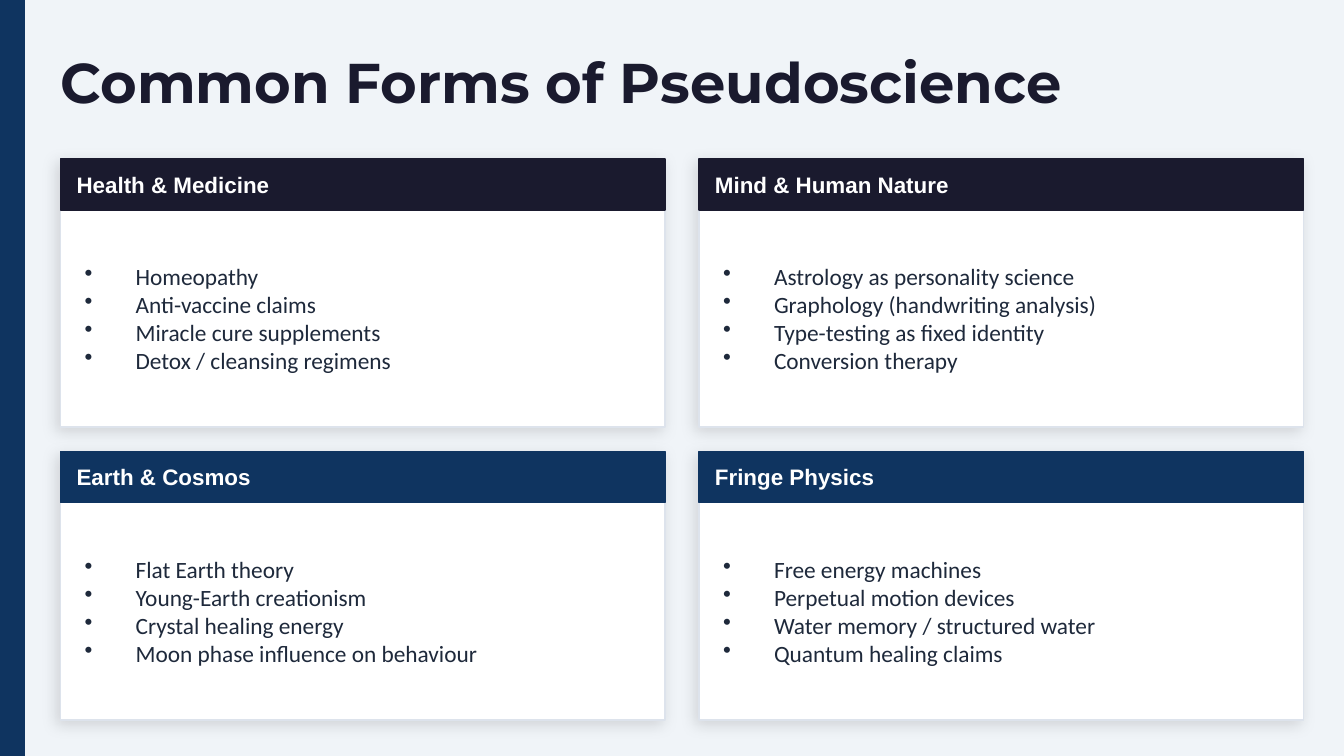
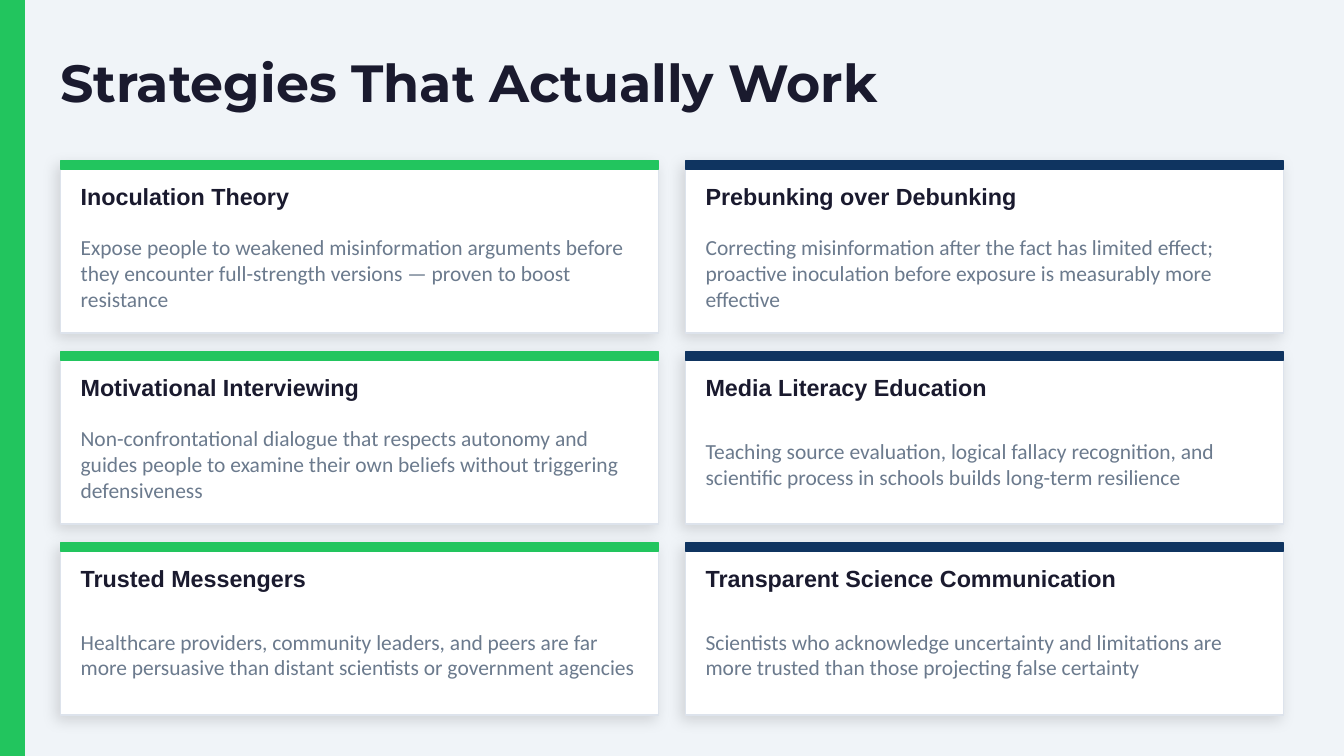
from lxml import etree
from pptx import Presentation
from pptx import util as u
from pptx.dml.color import RGBColor
from pptx.enum import shapes, text
from pptx.oxml.ns import qn

# Content: heading, then body
FORMS = [
    ("Health & Medicine", ["Homeopathy", "Anti-vaccine claims",
                           "Miracle cure supplements", "Detox / cleansing regimens"]),
    ("Mind & Human Nature", ["Astrology as personality science",
                             "Graphology (handwriting analysis)",
                             "Type-testing as fixed identity", "Conversion therapy"]),
    ("Earth & Cosmos", ["Flat Earth theory", "Young-Earth creationism",
                        "Crystal healing energy", "Moon phase influence on behaviour"]),
    ("Fringe Physics", ["Free energy machines", "Perpetual motion devices",
                        "Water memory / structured water", "Quantum healing claims"]),
]
PLANS = [
    ("Inoculation Theory", "Expose people to weakened misinformation arguments before "
     "they encounter full-strength versions — proven to boost resistance"),
    ("Prebunking over Debunking", "Correcting misinformation after the fact has limited "
     "effect; proactive inoculation before exposure is measurably more effective"),
    ("Motivational Interviewing", "Non-confrontational dialogue that respects autonomy and "
     "guides people to examine their own beliefs without triggering defensiveness"),
    ("Media Literacy Education", "Teaching source evaluation, logical fallacy recognition, "
     "and scientific process in schools builds long-term resilience"),
    ("Trusted Messengers", "Healthcare providers, community leaders, and peers are far "
     "more persuasive than distant scientists or government agencies"),
    ("Transparent Science Communication", "Scientists who acknowledge uncertainty and "
     "limitations are more trusted than those projecting false certainty"),
]

# Shared style
HEX = {"page": "F0F4F8", "ink": "1A1A2E", "navy": "0F3460", "green": "22C55E",
       "card": "FFFFFF", "edge": "DDE3EC", "body": "1E293B", "gray": "6B7A8D"}
HEAD, BODY, TITLE = "Arial", "Calibri", "Montserrat"
LEFT, COLS = 0.45, 2

deck = Presentation()
deck.slide_width = u.Inches(10)
deck.slide_height = deck.slide_width * 9 // 16
TALL = deck.slide_height / u.Inches(1)


def rgb(name):
    return RGBColor.from_string(HEX[name])


def inch(*box):
    return [u.Inches(v) for v in box]


def write(shape, lines, size=12, font=BODY, color="ink", bold=False, bullet=False):
    """Fill a shape with one paragraph per line."""
    frame = shape.text_frame
    frame.word_wrap = True
    frame.auto_size = text.MSO_AUTO_SIZE.NONE
    frame.vertical_anchor = text.MSO_ANCHOR.MIDDLE
    frame.margin_left = frame.margin_right = frame.margin_top = frame.margin_bottom = 0
    for i, line in enumerate([lines] if isinstance(lines, str) else lines):
        para = frame.add_paragraph() if i else frame.paragraphs[0]
        para.alignment = text.PP_ALIGN.LEFT
        if bullet:
            props = para._p.get_or_add_pPr()
            props.set("marL", str(u.Inches(0.38)))
            props.set("indent", str(-u.Inches(0.38)))
            etree.SubElement(props, qn("a:buChar"), char="•")
        run = para.add_run()
        run.text = line
        run.font.size, run.font.name, run.font.bold = u.Pt(size), font, bold
        run.font.color.rgb = rgb(color)


def label(slide, box, lines, **style):
    write(slide.shapes.add_textbox(*inch(*box)), lines, **style)


def rect(slide, box, fill, edge=None, shade=False):
    shape = slide.shapes.add_shape(shapes.MSO_SHAPE.RECTANGLE, *inch(*box))
    shape.fill.solid()
    shape.fill.fore_color.rgb = rgb(fill)
    shape.line.color.rgb = rgb(edge or fill)
    shape.line.width = u.Pt(1)
    shape.shadow.inherit = False
    if shade:
        effect = shape._element.spPr.find(qn("a:effectLst"))
        drop = etree.SubElement(effect, qn("a:outerShdw"), blurRad=str(u.Pt(8)),
                                dist=str(u.Pt(3)), dir=str(135 * 60000),
                                algn="bl", rotWithShape="0")
        tint = etree.SubElement(drop, qn("a:srgbClr"), val="000000")
        etree.SubElement(tint, qn("a:alpha"), val="12000")


def start(title, size, side):
    """Add a slide with its background, side band and title."""
    slide = deck.slides.add_slide(deck.slide_layouts[5])
    slide.background.fill.solid()
    slide.background.fill.fore_color.rgb = rgb("page")
    rect(slide, (0, 0, 0.18, TALL), side)
    head = slide.shapes.title
    head.left, head.top, head.width, head.height = inch(LEFT, 0.28, 9.2, 0.65)
    write(head, title, size=size, font=TITLE, bold=True)
    return slide


def cards(slide, items, top, wide, high, gaps, band, tints):
    """Lay out cards row by row; yield each corner, heading and body."""
    for i, (head, body) in enumerate(items):
        row, col = divmod(i, COLS)
        x = LEFT + col * (wide + gaps[0])
        y = top + row * (high + gaps[1])
        rect(slide, (x, y, wide, high), "card", "edge", shade=True)
        rect(slide, (x, y, wide, band), tints[row][col])
        yield x, y, head, body


# Forms: two by two, one header colour per row
page = start("Common Forms of Pseudoscience", 30, "navy")
tints = [("ink", "ink"), ("navy", "navy")]
for x, y, head, body in cards(page, FORMS, 1.18, 4.5, 2, (0.25, 0.18), 0.38, tints):
    label(page, (x + 0.12, y + 0.04, 4.3, 0.3), head, font=HEAD, color="card", bold=True)
    label(page, (x + 0.18, y + 0.44, 4.2, 1.5), body, size=12.5, color="body", bullet=True)

# Strategies: three rows, one accent colour per column
page = start("Strategies That Actually Work", 28, "green")
tints = [("green", "navy")] * 3
for x, y, head, body in cards(page, PLANS, 1.2, 4.45, 1.28, (0.2, 0.14), 0.06, tints):
    label(page, (x + 0.15, y + 0.1, 4.22, 0.32), head, size=12.5, font=HEAD, bold=True)
    label(page, (x + 0.15, y + 0.44, 4.22, 0.78), body, size=11.5, color="gray")

deck.save("out.pptx")
